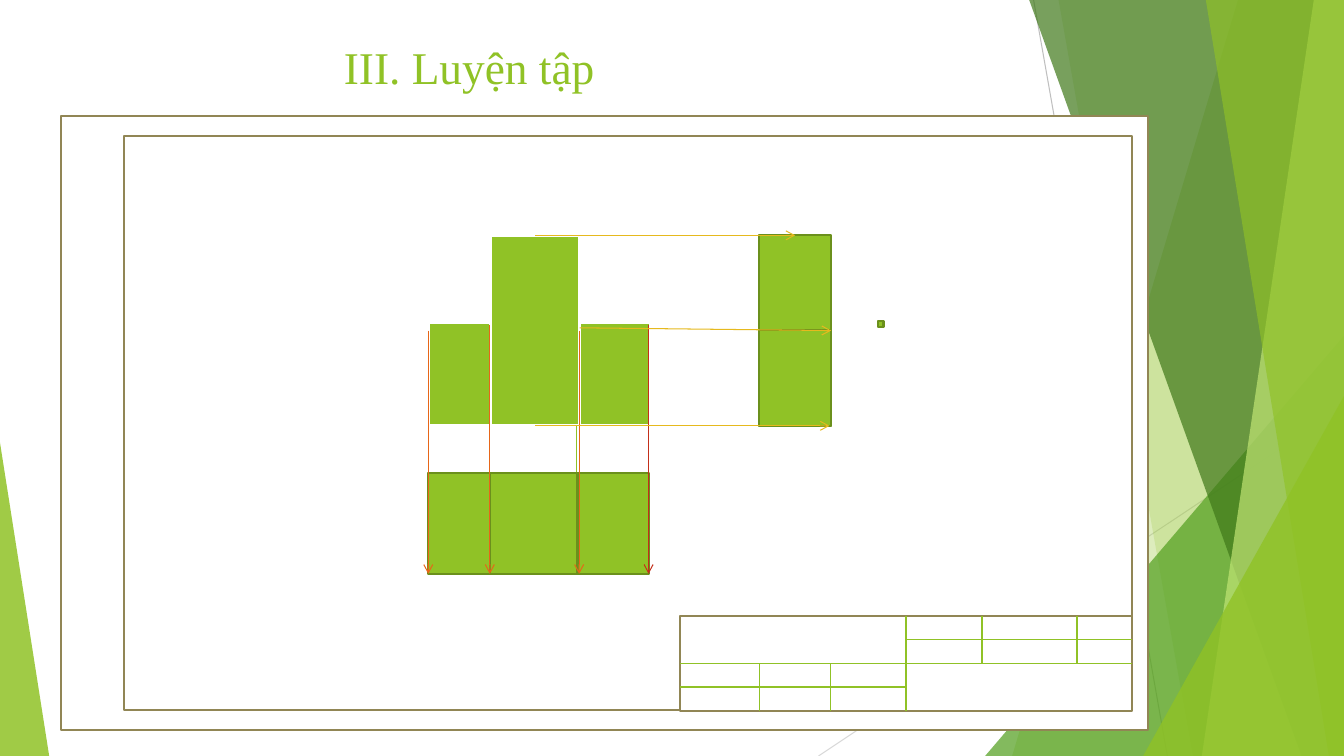
"""Build the practice slide with three projected views on a drawing sheet."""
from lxml import etree
from pptx import Presentation
from pptx.dml.color import RGBColor
from pptx.enum.shapes import MSO_CONNECTOR, MSO_SHAPE
from pptx.enum.text import MSO_ANCHOR, PP_ALIGN
from pptx.oxml.ns import qn
from pptx.util import Cm, Pt

STRAIGHT = MSO_CONNECTOR.STRAIGHT
RECTANGLE = MSO_SHAPE.RECTANGLE
TRIANGLE = MSO_SHAPE.ISOSCELES_TRIANGLE
BOTTOM = MSO_ANCHOR.BOTTOM
LEFT = PP_ALIGN.LEFT

COLORS = {
    "white": "FFFFFF", "green": "90C226", "leaf": "54A021", "forest": "3F7819",
    "lime": "C0E474", "edge": "6B901C", "sheet": "918655", "orange": "E76618",
    "red": "C42F1A", "gold": "E6B91E", "gray": "BFBFBF", "pale": "D9D9D9",
}
WIDTH, HEIGHT = 33.86, 19.05
TITLE = "III. Luyện tập"
TITLE_BOX = (8.41, 0.86, 17.63, 1.63)

BACKDROP_LINES = [
    ((26.04, 0), (29.41, HEIGHT), "gray"),
    ((WIDTH, 10.24), (20.62, HEIGHT), "pale"),
]
BACKDROP = [
    ("band", {"top_x": 31.19, "bottom_x": 25.5}, "green", 30),
    ("band", {"top_x": 26.67, "bottom_x": 30.05}, "green", 20),
    ("triangle", {"left": 24.82, "top": 8.46, "right": WIDTH, "apex": 1}, "leaf", 72),
    ("band", {"top_x": 25.93, "bottom_x": 32.79}, "forest", 70),
    ("band", {"top_x": 33.1, "bottom_x": 30.28}, "lime", 70),
    ("band", {"top_x": 30.38, "bottom_x": 33.48}, "green", 65),
    ("triangle", {"left": 28.8, "top": 9.98, "right": WIDTH, "apex": 1}, "green", 80),
    ("triangle", {"left": 0, "top": 11.15, "right": 1.24, "apex": 0}, "green", 85),
]

BLOCK_LEFT, BLOCK_TOP, BLOCK_WIDTH, BLOCK_HEIGHT = 17.13, 15.52, 11.4, 2.39
BLOCK_RIGHT = BLOCK_LEFT + BLOCK_WIDTH
BLOCK_MIDDLE = BLOCK_LEFT + BLOCK_WIDTH / 2
ROWS = [BLOCK_TOP + BLOCK_HEIGHT * row / 4 for row in range(5)]
UPPER_COLUMNS = [24.74, 27.13]
LOWER_COLUMNS = [19.13, 20.93]

SHEET = [
    ("paper", (1.53, 2.92, 27.4, 15.47), "white", "sheet", 1.5),
    ("frame", (3.12, 3.43, 25.4, 14.46), "white", "sheet", 1.5),
    ("block", (BLOCK_LEFT, BLOCK_TOP, BLOCK_WIDTH, BLOCK_HEIGHT), "white", "sheet", 1.5),
    ("dot", (22.11, 8.1, 0.15, 0.15), "green", "edge", 1.5),
    ("front base", (10.79, 8.13, 5.59, 2.59), "green", "white", 2),
    ("front tower", (12.36, 5.93, 2.24, 4.8), "green", "white", 2),
    ("plan", (10.79, 11.91, 5.56, 2.55), "green", "edge", 1.5),
]
SEAM = ((14.53, 10.72), (14.53, 14.12))
UPPER_VIEWS = [
    ("plan tower", (12.34, 11.91, 2.21, 2.55), "green", "edge", 1.5),
    ("side", (19.13, 5.93, 1.81, 4.8), "green", "edge", 1.5),
    ("side base", (19.13, 8.32, 1.81, 2.41), "green", "edge", 1.5),
]
PLAN_BOTTOM = 14.46
DOWN_ARROWS = [
    (12.34, 8.18, "orange"), (10.79, 8.33, "orange"),
    (14.59, 8.33, "orange"), (16.34, 8.18, "red"),
]
SIDE_ARROWS = [
    ((13.48, 5.93), (20.03, 5.93), ("front tower", 0), ("side", 0)),
    ((14.6, 8.26), (20.94, 8.33), None, ("side", 3)),
    ((13.48, 10.73), (20.9, 10.73), ("front tower", 2), None),
]


def rgb(name):
    return RGBColor.from_string(COLORS[name])


def fill_shape(shape, color, opacity=100):
    shape.shadow.inherit = False
    shape.fill.solid()
    shape.fill.fore_color.rgb = rgb(color)
    if opacity < 100:
        color_element = shape._element.spPr.find(qn("a:solidFill"))[0]
        etree.SubElement(color_element, qn("a:alpha")).set("val", str(opacity * 1000))


def add_band(shapes, top_x, bottom_x):
    builder = shapes.build_freeform(Cm(top_x), 0)
    corners = [(WIDTH, 0), (WIDTH, HEIGHT), (bottom_x, HEIGHT)]
    builder.add_line_segments([(Cm(x), Cm(y)) for x, y in corners])
    return builder.convert_to_shape()


def add_triangle(shapes, left, top, right, apex):
    box = (left, top, right - left, HEIGHT - top)
    shape = shapes.add_shape(TRIANGLE, *map(Cm, box))
    shape.adjustments[0] = apex
    return shape


def add_backdrop(shapes):
    for start, end, color in BACKDROP_LINES:
        add_line(shapes, start, end, color)
    builders = {"band": add_band, "triangle": add_triangle}
    for kind, geometry, color, opacity in BACKDROP:
        shape = builders[kind](shapes, **geometry)
        fill_shape(shape, color, opacity)
        shape.line.fill.background()


def add_boxes(shapes, boxes):
    result = {}
    for name, box, fill, outline, width in boxes:
        shape = shapes.add_shape(RECTANGLE, *map(Cm, box))
        fill_shape(shape, fill)
        shape.line.color.rgb = rgb(outline)
        shape.line.width = Pt(width)
        result[name] = shape
    return result


def add_line(shapes, start, end, color, width=0.75, arrow=False):
    line = shapes.add_connector(STRAIGHT, *map(Cm, start + end))
    line.line.color.rgb = rgb(color)
    line.line.width = Pt(width)
    properties = line._element.spPr
    if arrow:
        outline = properties.find(qn("a:ln"))
        etree.SubElement(outline, qn("a:tailEnd")).set("type", "arrow")
    etree.SubElement(properties, qn("a:effectLst"))
    return line


def add_title_block_lines(shapes, block):
    across = add_line(shapes, (BLOCK_LEFT, ROWS[2]), (BLOCK_RIGHT, ROWS[2]), "green", 1)
    across.begin_connect(block, 1)
    across.end_connect(block, 3)
    down = add_line(shapes, (BLOCK_MIDDLE, ROWS[0]), (BLOCK_MIDDLE, ROWS[4]), "green", 1)
    down.begin_connect(block, 0)
    down.end_connect(block, 2)
    lines = [((BLOCK_LEFT, ROWS[3]), (BLOCK_MIDDLE, ROWS[3])),
             ((BLOCK_MIDDLE, ROWS[1]), (BLOCK_RIGHT, ROWS[1]))]
    lines += [((x, ROWS[0]), (x, ROWS[2])) for x in UPPER_COLUMNS]
    lines += [((x, ROWS[2]), (x, ROWS[4])) for x in LOWER_COLUMNS]
    for start, end in lines:
        add_line(shapes, start, end, "green", 1)


def add_title(title):
    title.left, title.top, title.width, title.height = map(Cm, TITLE_BOX)
    title.text_frame.text = TITLE
    title.text_frame.vertical_anchor = BOTTOM
    paragraph = title.text_frame.paragraphs[0]
    paragraph.alignment = LEFT
    paragraph.font.name = "Times New Roman"
    paragraph.font.size = Pt(32.4)
    paragraph.font.color.rgb = rgb("green")


def main():
    presentation = Presentation()
    presentation.slide_width, presentation.slide_height = Cm(WIDTH), Cm(HEIGHT)
    slide = presentation.slides.add_slide(presentation.slide_layouts[5])
    shapes = slide.shapes
    add_title(shapes.title)
    add_backdrop(shapes)
    boxes = add_boxes(shapes, SHEET)
    add_line(shapes, *SEAM, "green", 1)
    boxes.update(add_boxes(shapes, UPPER_VIEWS))
    add_title_block_lines(shapes, boxes["block"])
    for x, top, color in DOWN_ARROWS:
        add_line(shapes, (x, top), (x, PLAN_BOTTOM), color, arrow=True)
    for start, end, source, target in SIDE_ARROWS:
        line = add_line(shapes, start, end, "gold", arrow=True)
        if source:
            line.begin_connect(boxes[source[0]], source[1])
        if target:
            line.end_connect(boxes[target[0]], target[1])
    presentation.save("out.pptx")


if __name__ == "__main__":
    main()
